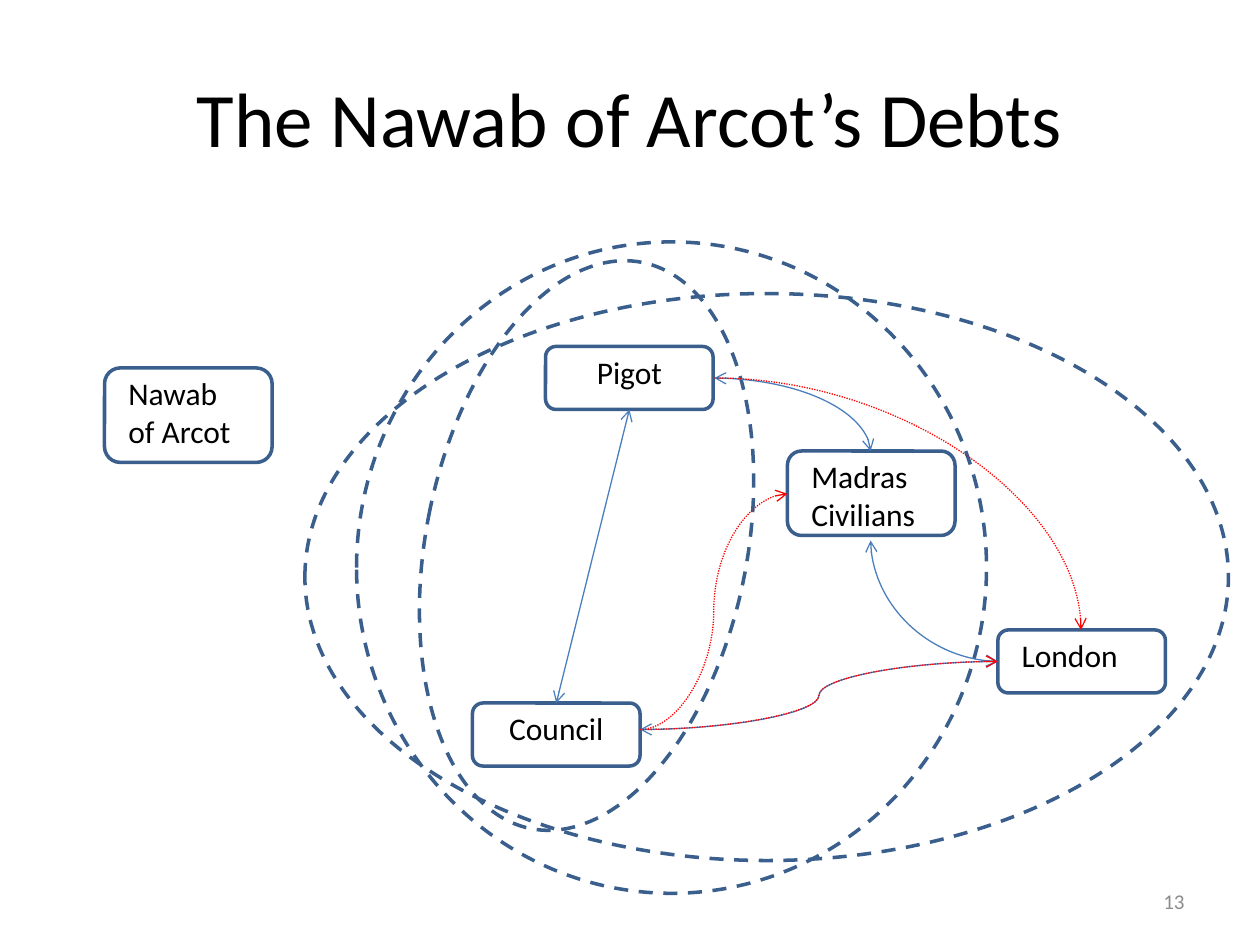
from pptx import Presentation
from pptx.dml.color import RGBColor
from pptx.enum import dml, shapes, text
from pptx.oxml import parse_xml
from pptx.oxml.ns import nsdecls
from pptx.util import Inches, Pt

BLACK, GREY, RED = "000000", "8C8C8C", "FF0000"
OUTLINE, BLUE = "3A5F8C", "4B7EBC"
LEFT, CENTER, RIGHT = text.PP_ALIGN.LEFT, text.PP_ALIGN.CENTER, text.PP_ALIGN.RIGHT
TOP, MIDDLE = text.MSO_ANCHOR.TOP, text.MSO_ANCHOR.MIDDLE
TOP_SIDE, BOTTOM_SIDE = 0, 2


def color(hex_string):
    return RGBColor.from_string(hex_string)


def add_text(slide, box, words, size, align=LEFT, anchor=TOP, ink=BLACK):
    frame = slide.shapes.add_textbox(*map(Inches, box)).text_frame
    frame.word_wrap = True
    frame.vertical_anchor = anchor
    paragraph = frame.paragraphs[0]
    paragraph.alignment = align
    run = paragraph.add_run()
    run.text = words
    run.font.name = "Calibri"
    run.font.size = Pt(size)
    run.font.color.rgb = color(ink)


def add_outline(slide, kind, box):
    shape = slide.shapes.add_shape(kind, *map(Inches, box))
    shape.shadow.inherit = False
    shape.fill.background()
    shape.line.color.rgb = color(OUTLINE)
    shape.line.width = Pt(2)
    return shape


def add_circle(slide, box, rotation=0):
    circle = add_outline(slide, shapes.MSO_SHAPE.OVAL, box)
    circle.line.dash_style = dml.MSO_LINE.DASH
    circle.rotation = rotation


def add_actor(slide, box, name, label_height=0.4, label_inset=0.09, align=LEFT):
    """Rounded box with its name in a text box starting at the same top."""
    left, top, width, _ = box
    actor = add_outline(slide, shapes.MSO_SHAPE.ROUNDED_RECTANGLE, box)
    label_box = (left + label_inset, top, width - 2 * label_inset, label_height)
    add_text(slide, label_box, name, 18, align)
    return actor


def add_link(slide, start, end, kind=shapes.MSO_CONNECTOR.CURVE, quarter=False, secret=False):
    """Blue two-way link, or dotted red one-way link if secret.

    A quarter curve leaves sideways and arrives vertically.
    """
    link = slide.shapes.add_connector(kind, *map(Inches, start + end))
    link.line.color.rgb = color(RED if secret else BLUE)
    link.line.width = Pt(0.75)
    if secret:
        link.line.dash_style = dml.MSO_LINE.ROUND_DOT
    properties = link._element.spPr
    if quarter:
        properties.prstGeom.set("prst", "curvedConnector2")
    for tag in ["tailEnd"] if secret else ["headEnd", "tailEnd"]:
        properties.ln.append(parse_xml(f'<a:{tag} {nsdecls("a")} type="arrow"/>'))
    properties.append(parse_xml(f'<a:effectLst {nsdecls("a")}/>'))
    return link


def add_network(slide):
    add_circle(slide, (3.38, 2.04, 2.55, 4.58), rotation=11.1)
    add_circle(slide, (2.42, 2.33, 7.33, 4.5))
    add_circle(slide, (2.83, 1.92, 5, 5.17))

    pigot = add_actor(slide, (4.33, 2.75, 1.33, 0.5), "Pigot", align=CENTER)
    council = add_actor(slide, (3.75, 5.58, 1.33, 0.5), "Council", label_inset=0, align=CENTER)
    add_actor(slide, (6.25, 3.58, 1.33, 0.67), "Madras Civilians", label_height=0.71)
    add_actor(slide, (7.92, 5, 1.33, 0.5), "London")
    add_actor(slide, (0.83, 2.92, 1.33, 0.75), "Nawab of Arcot", label_height=0.71)

    pigot_right, council_right = (5.67, 3), (5.08, 5.79)
    madras_top, madras_left, madras_bottom = (6.91, 3.58), (6.25, 3.92), (6.91, 4.29)
    london_top, london_left = (8.58, 5), (7.92, 5.25)

    add_link(slide, council_right, madras_left, secret=True)
    straight = add_link(slide, (5, 3.25), (4.42, 5.58), kind=shapes.MSO_CONNECTOR.STRAIGHT)
    straight.begin_connect(pigot, BOTTOM_SIDE)
    straight.end_connect(council, TOP_SIDE)
    add_link(slide, london_left, madras_bottom, quarter=True)
    add_link(slide, london_left, council_right)
    add_link(slide, pigot_right, madras_top, quarter=True)
    add_link(slide, pigot_right, london_top, quarter=True, secret=True)
    add_link(slide, council_right, london_left, secret=True)


def main():
    presentation = Presentation()
    presentation.slide_width = Inches(10)
    presentation.slide_height = Inches(7.5)
    slide = presentation.slides.add_slide(presentation.slide_layouts[6])
    add_text(slide, (0.5, 0.3, 9, 1.25), "The Nawab of Arcot’s Debts", 44, CENTER, MIDDLE)
    add_network(slide)
    add_text(slide, (7.17, 6.95, 2.33, 0.4), "13", 12, RIGHT, MIDDLE, GREY)
    presentation.save("out.pptx")


if __name__ == "__main__":
    main()
